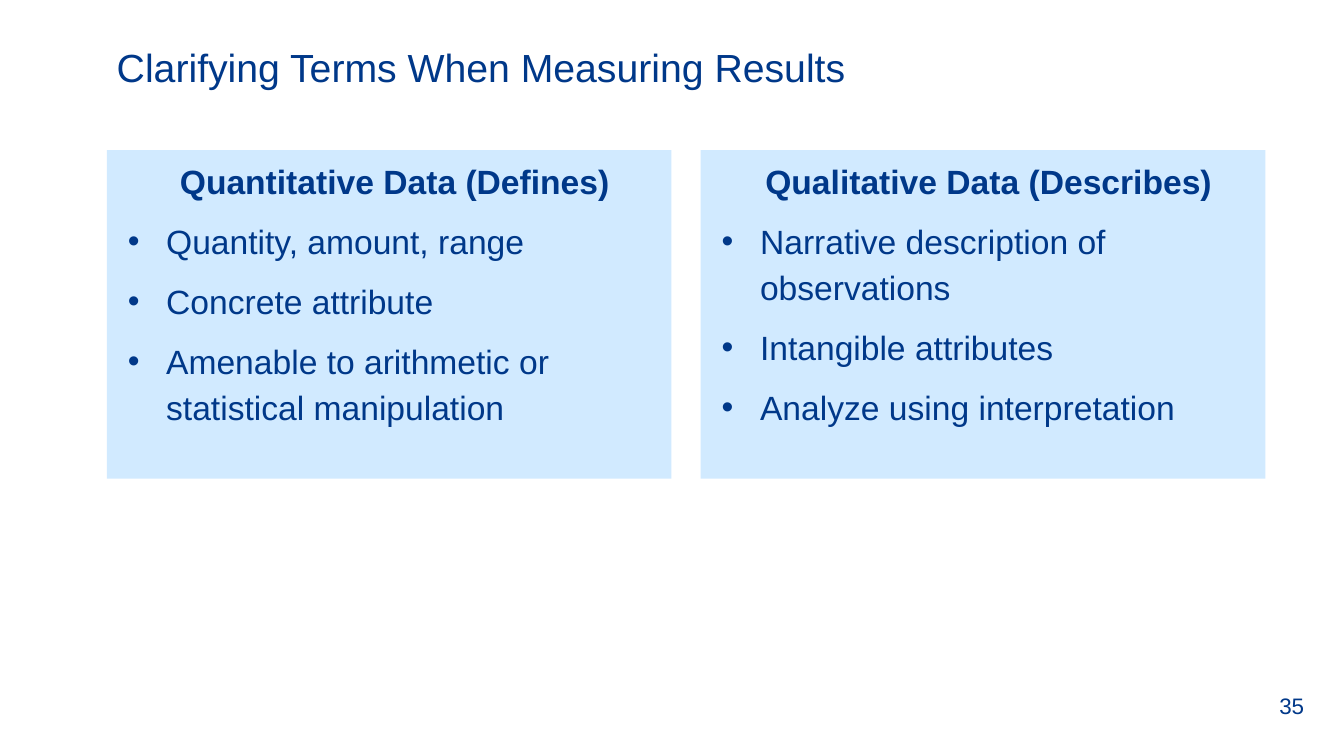
from dataclasses import dataclass

from lxml.etree import SubElement
from pptx import Presentation
from pptx.dml.color import RGBColor
from pptx.enum.shapes import MSO_SHAPE
from pptx.enum.text import MSO_ANCHOR, PP_ALIGN
from pptx.oxml.ns import qn
from pptx.util import Inches, Pt


@dataclass(frozen=True)
class Theme:
    font: str = "Arial"
    navy: str = "003889"
    pale_blue: str = "D1EAFF"
    white: str = "FFFFFF"
    title_size: int = 28
    body_size: int = 24
    number_size: int = 16


theme = Theme()


def format_runs(paragraph, size, bold=False):
    for run in paragraph.runs:
        run.font.name = theme.font
        run.font.size = Pt(size)
        run.font.bold = bold
        run.font.color.rgb = RGBColor.from_string(theme.navy)


def add_bullet(paragraph):
    properties = paragraph._p.get_or_add_pPr()
    properties.set("marL", str(Inches(0.49)))
    properties.set("indent", str(Inches(-0.38)))
    bullet_color = SubElement(properties, qn("a:buClr"))
    SubElement(bullet_color, qn("a:srgbClr"), val=theme.navy)
    SubElement(properties, qn("a:buFont"), typeface=theme.font)
    SubElement(properties, qn("a:buChar"), char="•")


presentation = Presentation()
presentation.slide_width = Inches(13.33)
presentation.slide_height = Inches(7.5)
slide = presentation.slides.add_slide(presentation.slide_layouts[6])
slide.background.fill.solid()
slide.background.fill.fore_color.rgb = RGBColor.from_string(theme.white)

labels = [
    ("Clarifying Terms When Measuring Results", 1.06, 0.38, 11.5, 0.96,
     theme.title_size, MSO_ANCHOR.TOP),
    ("35", 12.59, 6.8, 0.63, 0.4, theme.number_size, MSO_ANCHOR.MIDDLE),
]
for text, left, top, width, height, size, anchor in labels:
    label = slide.shapes.add_textbox(Inches(left), Inches(top), Inches(width), Inches(height))
    label.text_frame.word_wrap = True
    label.text_frame.vertical_anchor = anchor
    label.text_frame.text = text
    format_runs(label.text_frame.paragraphs[0], size)

panels = [
    ("Quantitative Data (Defines)", [
        "Quantity, amount, range",
        "Concrete attribute",
        "Amenable to arithmetic or statistical manipulation",
    ]),
    ("Qualitative Data (Describes)", [
        "Narrative description of observations",
        "Intangible attributes",
        "Analyze using interpretation",
    ]),
]
panel_left, panel_top, panel_width, panel_height = 1.06, 1.49, 5.6, 3.26
panel_gap = 0.29

for index, (heading, points) in enumerate(panels):
    left = panel_left + index * (panel_width + panel_gap)
    panel = slide.shapes.add_shape(
        MSO_SHAPE.RECTANGLE, Inches(left), Inches(panel_top),
        Inches(panel_width), Inches(panel_height))
    panel.shadow.inherit = False
    panel.fill.solid()
    panel.fill.fore_color.rgb = RGBColor.from_string(theme.pale_blue)
    panel.line.fill.background()
    text_frame = panel.text_frame
    text_frame.word_wrap = True
    text_frame.vertical_anchor = MSO_ANCHOR.TOP

    text_frame.text = heading
    heading_paragraph = text_frame.paragraphs[0]
    heading_paragraph.alignment = PP_ALIGN.CENTER
    heading_paragraph.line_spacing = 1.14
    heading_paragraph._p.get_or_add_pPr().set("marL", str(Inches(0.11)))
    format_runs(heading_paragraph, theme.body_size, bold=True)

    for point in points:
        paragraph = text_frame.add_paragraph()
        paragraph.text = point
        paragraph.alignment = PP_ALIGN.LEFT
        paragraph.line_spacing = 1.14
        paragraph.space_before = Pt(10)
        add_bullet(paragraph)
        format_runs(paragraph, theme.body_size)

presentation.save("out.pptx")
